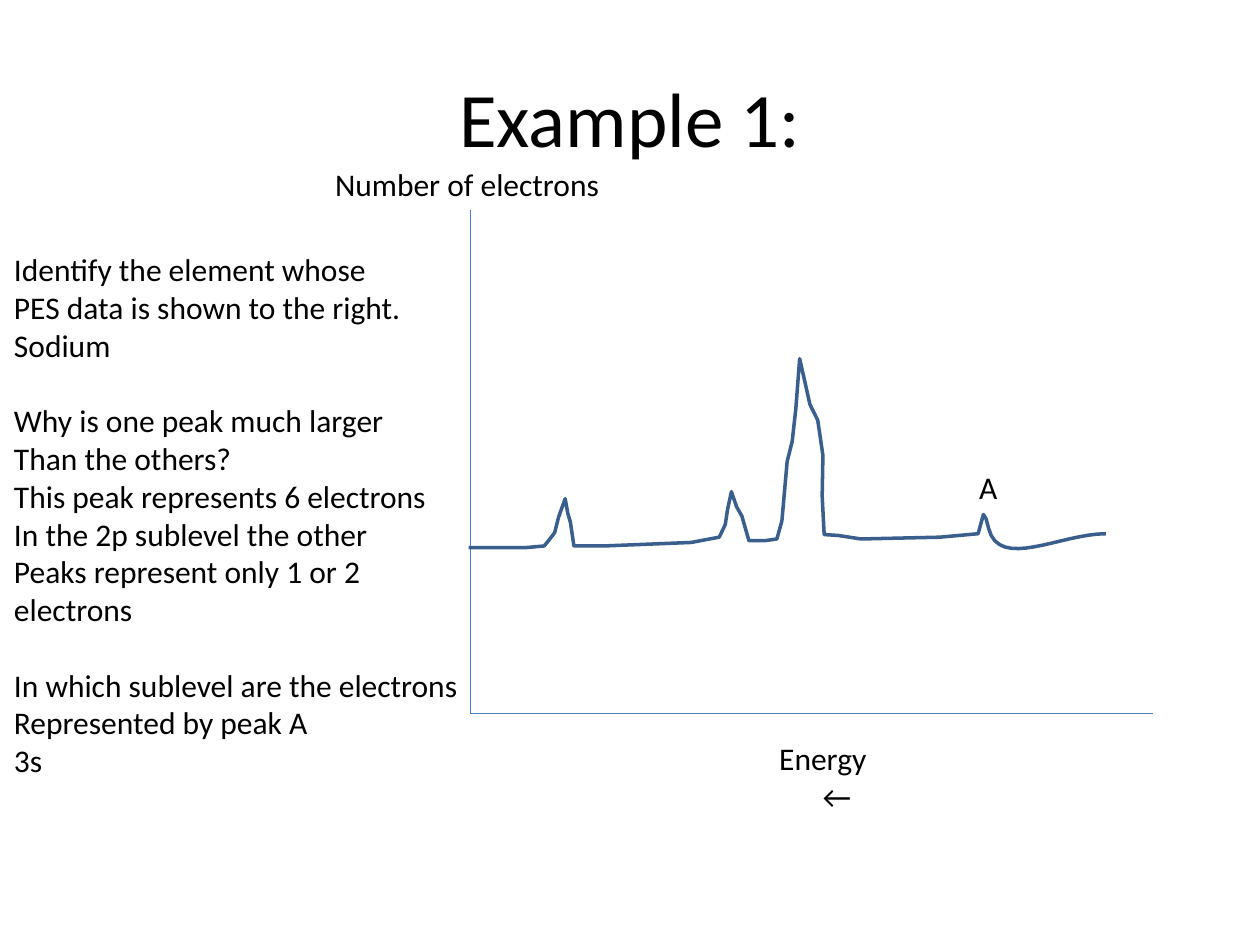
import typing

import pptx
import pptx.util
import pptx.dml.color
import pptx.enum.shapes
import pptx.enum.text
import pptx.oxml.ns
import lxml.etree

Pt = pptx.util.Pt
RGBColor = pptx.dml.color.RGBColor
ALIGN = pptx.enum.text.PP_ALIGN

BLACK = RGBColor(0x00, 0x00, 0x00)
AXIS = RGBColor(0x4B, 0x7E, 0xBC)
TRACE = RGBColor(0x3A, 0x5F, 0x8C)
FONT = "Calibri"
BODY, HEAD = 18, 44
GAP = 21.5
LEFT, TOP, RIGHT, BASE = 269, 120, 658.8, 407.8

NOTES = [
    ["Identify the element whose", "PES data is shown to the right.", "Sodium"],
    ["Why is one peak much larger", "Than the others?",
     "This peak represents 6 electrons", "In the 2p sublevel the other",
     "Peaks represent only 1 or 2", "electrons"],
    ["In which sublevel are the electrons", "Represented by peak A", "3s"],
]


class Form(typing.NamedTuple):
    """Shares of a side's width from its start, and of its height from the foot."""
    rise: list
    fall: list


class Peak(typing.NamedTuple):
    lead: list
    start: tuple
    tip: tuple
    end: tuple
    form: Form


SMALL = Form(rise=[(0.15, 0.08), (0.5, 0.28), (0.68, 0.6)],
             fall=[(0.3, 0.69), (0.6, 0.5), (0.92, 0.1)])
LARGE = Form(rise=[(0.22, 0.1), (0.45, 0.43), (0.67, 0.54), (0.83, 0.72)],
             fall=[(0.21, 0.87), (0.42, 0.74), (0.74, 0.65), (0.95, 0.45),
                   (0.92, 0.22)])
SHARP = Form(rise=[], fall=[(0.5, 0.7)])

PEAKS = {
    "1s": Peak([(267.8, 313), (300, 313)], (311, 312), (323, 285), (328, 312), SMALL),
    "2s": Peak([(345, 312), (395, 310)], (411, 307), (418, 281), (428, 309), SMALL),
    "2p": Peak([(437, 309)], (444, 308), (457, 205), (471, 305.5), LARGE),
    "3s": Peak([(479, 306), (492, 308), (537, 307)],
               (559, 305), (562, 294), (565, 302), SHARP),
}
TAIL = [PEAKS["3s"].end, (571, 326), (606, 305), (632, 305)]


def add_text(slide, box, lines, size=BODY, align=ALIGN.LEFT, wrap=True):
    frame = slide.shapes.add_textbox(*[Pt(side) for side in box]).text_frame
    frame.word_wrap = wrap
    frame.text = "\n".join(lines)
    for para in frame.paragraphs:
        para.alignment = align
        for run in para.runs:
            run.font.size = Pt(size)
            run.font.name = FONT
            run.font.color.rgb = BLACK
    return frame


def add_axis(slide, start, end):
    kind = pptx.enum.shapes.MSO_CONNECTOR.STRAIGHT
    axis = slide.shapes.add_connector(kind, *[Pt(v) for v in start + end])
    axis.line.color.rgb = AXIS
    axis.line.width = Pt(0.75)
    lxml.etree.SubElement(axis._element.spPr, pptx.oxml.ns.qn("a:effectLst"))


def draw_side(start, end, shares):
    foot, tip = max(start[1], end[1]), min(start[1], end[1])
    return [(start[0] + across * (end[0] - start[0]), foot - up * (foot - tip))
            for across, up in shares]


def draw_peak(peak):
    rise = draw_side(peak.start, peak.tip, peak.form.rise)
    fall = draw_side(peak.tip, peak.end, peak.form.fall)
    return peak.lead + [peak.start] + rise + [peak.tip] + fall + [peak.end]


def draw_bend(ends, steps=16):
    points = []
    for step in range(1, steps + 1):
        t = step / steps
        parts = [(1 - t) ** 3, 3 * t * (1 - t) ** 2, 3 * t * t * (1 - t), t ** 3]
        points.append(tuple(sum(part * end[i] for part, end in zip(parts, ends))
                            for i in range(2)))
    return points


def add_trace(slide):
    points = [point for peak in PEAKS.values() for point in draw_peak(peak)]
    spots = [(Pt(x), Pt(y)) for x, y in points + draw_bend(TAIL)]
    pen = slide.shapes.build_freeform(*spots[0])
    pen.add_line_segments(spots[1:], close=False)
    trace = pen.convert_to_shape()
    trace.shadow.inherit = False
    trace.fill.background()
    trace.line.color.rgb = TRACE
    trace.line.width = Pt(2)


def add_title(slide):
    frame = add_text(slide, (36, 21.6, 648, 90), ["Example 1:"], HEAD, ALIGN.CENTER)
    frame.vertical_anchor = pptx.enum.text.MSO_ANCHOR.MIDDLE


def add_notes(slide):
    lines = [line for group in NOTES for line in group]
    frame = add_text(slide, (0.9, 139.4, 275, 334), lines, wrap=False)
    first = 0
    for group in NOTES[:-1]:
        first += len(group)
        frame.paragraphs[first].space_before = Pt(GAP)


def add_labels(slide):
    add_text(slide, (184.4, 90.7, 167, 29), ["Number of electrons"], wrap=False)
    frame = add_text(slide, (305.3, 419, 329.8, 51), ["Energy", "←"],
                     align=ALIGN.CENTER)
    frame.paragraphs[1]._p.get_or_add_pPr().set("marL", str(Pt(16)))
    add_text(slide, (552.5, 263.9, 25, 29), ["A"], wrap=False)


def main():
    deck = pptx.Presentation()
    deck.slide_width, deck.slide_height = Pt(720), Pt(540)
    slide = deck.slides.add_slide(deck.slide_layouts[6])
    add_title(slide)
    for end in [(LEFT, TOP), (RIGHT, BASE)]:
        add_axis(slide, (LEFT, BASE), end)
    add_notes(slide)
    add_trace(slide)
    add_labels(slide)
    deck.save("out.pptx")


if __name__ == "__main__":
    main()
